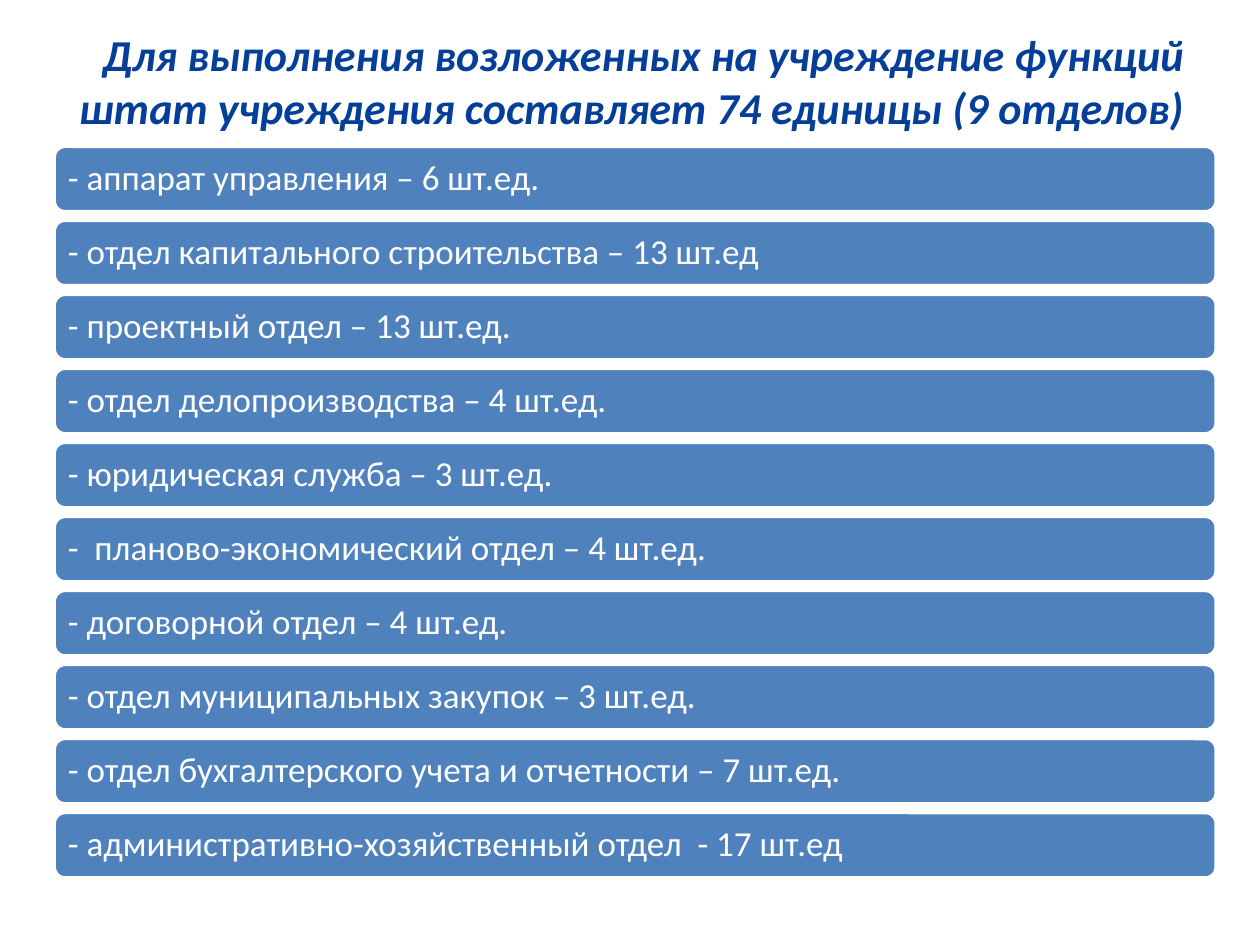
"""Build a slide listing the staff units of each department."""
from pptx import Presentation
from pptx.dml.color import RGBColor
from pptx.enum.shapes import MSO_SHAPE
from pptx.enum.text import MSO_ANCHOR, PP_ALIGN
from pptx.util import Pt


def color(value):
    return RGBColor.from_string(value)


departments = [
    "- аппарат управления – 6 шт.ед.",
    "- отдел капитального строительства – 13 шт.ед",
    "- проектный отдел – 13 шт.ед.",
    "- отдел делопроизводства – 4 шт.ед.",
    "- юридическая служба – 3 шт.ед.",
    "-  планово-экономический отдел – 4 шт.ед.",
    "- договорной отдел – 4 шт.ед.",
    "- отдел муниципальных закупок – 3 шт.ед.",
    "- отдел бухгалтерского учета и отчетности – 7 шт.ед.",
    "- административно-хозяйственный отдел  - 17 шт.ед",
]
first_top = 83.6
row_pitch = 42.3

deck = Presentation()
deck.slide_width = Pt(720)
deck.slide_height = Pt(540)
page = deck.slides.add_slide(deck.slide_layouts[5])

title = page.shapes.title
title.left, title.top, title.width, title.height = Pt(36), Pt(11), Pt(648), Pt(70)
title.text_frame.text = (
    "Для выполнения возложенных на учреждение функций "
    "штат учреждения составляет 74 единицы (9 отделов)"
)
title.text_frame.vertical_anchor = MSO_ANCHOR.MIDDLE
heading = title.text_frame.paragraphs[0]
heading.alignment = PP_ALIGN.RIGHT
span = heading.runs[0]
span.font.name = "Calibri"
span.font.size = Pt(25.2)
span.font.bold = True
span.font.italic = True
span.font.color.rgb = color("033E99")

for row, department in enumerate(departments):
    bar = page.shapes.add_shape(
        MSO_SHAPE.ROUNDED_RECTANGLE,
        Pt(31), Pt(first_top + row * row_pitch), Pt(664), Pt(37.4),
    )
    bar.shadow.inherit = False
    bar.fill.solid()
    bar.fill.fore_color.rgb = color("4F81BD")
    bar.line.color.rgb = color("FFFFFF")
    bar.line.width = Pt(2)

    frame = bar.text_frame
    frame.word_wrap = True
    frame.vertical_anchor = MSO_ANCHOR.MIDDLE
    frame.margin_left = frame.margin_right = Pt(6)
    frame.margin_top = frame.margin_bottom = Pt(6)
    frame.text = department
    para = frame.paragraphs[0]
    para.alignment = PP_ALIGN.LEFT
    para.line_spacing = 0.9
    span = para.runs[0]
    span.font.name = "Calibri"
    span.font.size = Pt(20)
    span.font.color.rgb = color("FFFFFF")

deck.save("out.pptx")
